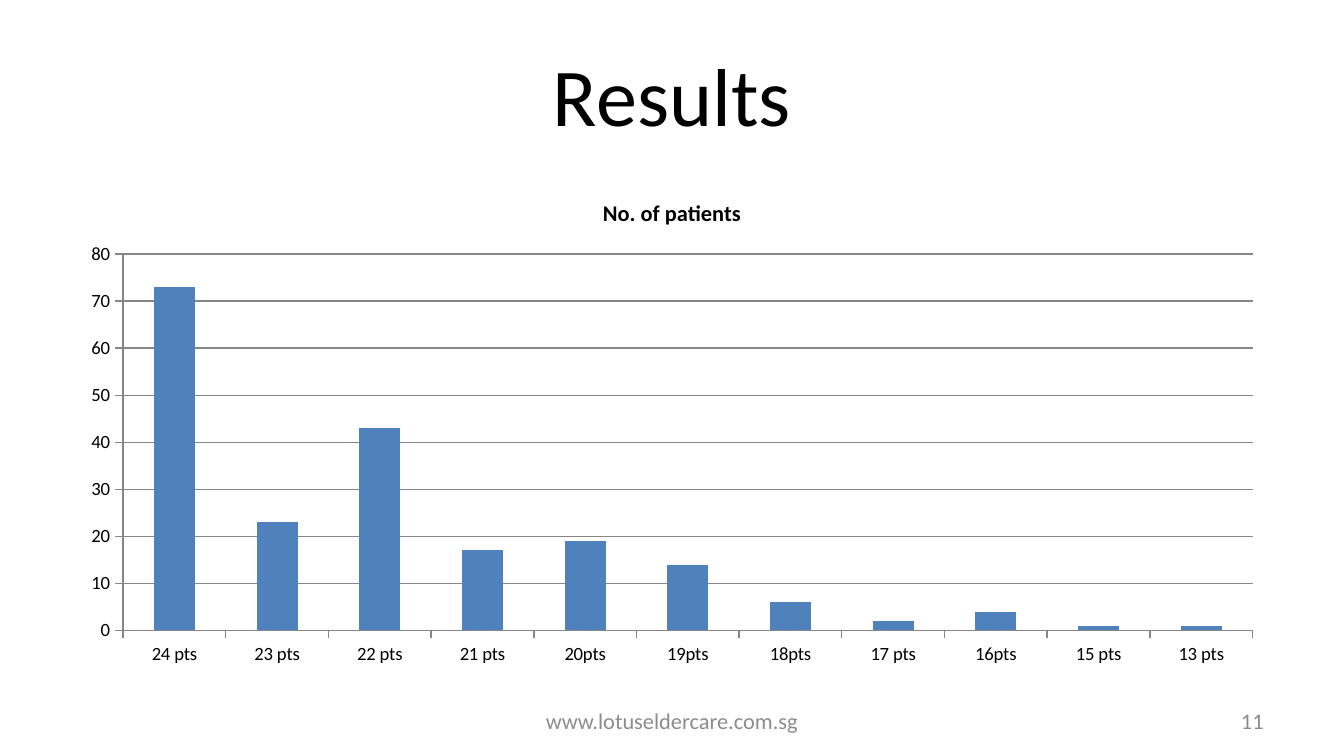
from dataclasses import dataclass

from pptx import Presentation
from pptx.chart.data import CategoryChartData
from pptx.dml.color import RGBColor
from pptx.enum.chart import XL_CHART_TYPE, XL_TICK_MARK
from pptx.enum.text import MSO_ANCHOR, PP_ALIGN
from pptx.util import Pt

COLUMNS = XL_CHART_TYPE.COLUMN_CLUSTERED
TICK_OUTSIDE = XL_TICK_MARK.OUTSIDE
MIDDLE = MSO_ANCHOR.MIDDLE
CENTER, RIGHT = PP_ALIGN.CENTER, PP_ALIGN.RIGHT

EMU_PER_PX = 9525  # 96 px to the inch
SLIDE_WIDTH, SLIDE_HEIGHT = 960, 540
TITLE_ONLY_LAYOUT = 5


@dataclass(frozen=True)
class Theme:
    font: str = "Calibri"
    text: RGBColor = RGBColor(0x00, 0x00, 0x00)
    footer: RGBColor = RGBColor(0x8C, 0x8C, 0x8C)
    bar: RGBColor = RGBColor(0x4F, 0x81, 0xBD)
    line: RGBColor = RGBColor(0x86, 0x86, 0x86)
    title_size: int = 44
    chart_title_size: int = 12
    chart_size: int = 10
    footer_size: int = 12


@dataclass(frozen=True)
class Box:
    left: int
    top: int
    width: int
    height: int

    def emu(self) -> tuple[int, ...]:
        return tuple(
            px * EMU_PER_PX for px in (self.left, self.top, self.width, self.height)
        )


@dataclass(frozen=True)
class FooterItem:
    text: str
    box: Box
    alignment: PP_ALIGN


THEME = Theme()
TITLE_BOX = Box(48, 22, 864, 90)
CHART_BOX = Box(48, 126, 864, 356)
FOOTER_ITEMS = (
    FooterItem("www.lotuseldercare.com.sg", Box(328, 501, 304, 28), CENTER),
    FooterItem("11", Box(688, 501, 224, 28), RIGHT),
)
SERIES_NAME = "No. of patients"
PATIENTS_BY_SCORE = {
    "24 pts": 73, "23 pts": 23, "22 pts": 43, "21 pts": 17,
    "20pts": 19, "19pts": 14, "18pts": 6, "17 pts": 2,
    "16pts": 4, "15 pts": 1, "13 pts": 1,
}


def style_font(font, size: int, color: RGBColor, bold: bool = False) -> None:
    font.name = THEME.font
    font.size = Pt(size)
    font.bold = bold
    font.color.rgb = color


def write_line(shape, text: str, alignment: PP_ALIGN, size: int, color: RGBColor) -> None:
    frame = shape.text_frame
    frame.word_wrap = True
    frame.vertical_anchor = MIDDLE
    paragraph = frame.paragraphs[0]
    paragraph.text = text
    paragraph.alignment = alignment
    style_font(paragraph.font, size, color)


def add_title(slide, text: str) -> None:
    title = slide.shapes.title
    title.left, title.top, title.width, title.height = TITLE_BOX.emu()
    write_line(title, text, CENTER, THEME.title_size, THEME.text)


def add_footer(slide, item: FooterItem) -> None:
    shape = slide.shapes.add_textbox(*item.box.emu())
    write_line(shape, item.text, item.alignment, THEME.footer_size, THEME.footer)


def add_patient_chart(slide) -> None:
    data = CategoryChartData()
    data.categories = list(PATIENTS_BY_SCORE)
    data.add_series(SERIES_NAME, list(PATIENTS_BY_SCORE.values()))
    chart = slide.shapes.add_chart(COLUMNS, *CHART_BOX.emu(), data).chart

    style_font(chart.font, THEME.chart_size, THEME.text)
    chart.has_legend = False
    chart.has_title = True
    paragraph = chart.chart_title.text_frame.paragraphs[0]
    paragraph.text = SERIES_NAME
    style_font(paragraph.font, THEME.chart_title_size, THEME.text, bold=True)

    plot = chart.plots[0]
    plot.gap_width = 150
    plot.vary_by_categories = False
    fill = plot.series[0].format.fill
    fill.solid()
    fill.fore_color.rgb = THEME.bar

    value_axis = chart.value_axis
    value_axis.minimum_scale = 0
    value_axis.maximum_scale = 80
    value_axis.major_unit = 10
    value_axis.has_major_gridlines = True
    for axis in (chart.category_axis, value_axis):
        axis.major_tick_mark = TICK_OUTSIDE
    for ruled in (chart.category_axis, value_axis, value_axis.major_gridlines):
        ruled.format.line.color.rgb = THEME.line
        ruled.format.line.width = Pt(0.75)


def main() -> None:
    presentation = Presentation()
    presentation.slide_width = SLIDE_WIDTH * EMU_PER_PX
    presentation.slide_height = SLIDE_HEIGHT * EMU_PER_PX
    slide = presentation.slides.add_slide(presentation.slide_layouts[TITLE_ONLY_LAYOUT])
    add_title(slide, "Results")
    add_patient_chart(slide)
    for item in FOOTER_ITEMS:
        add_footer(slide, item)
    presentation.save("out.pptx")


if __name__ == "__main__":
    main()
